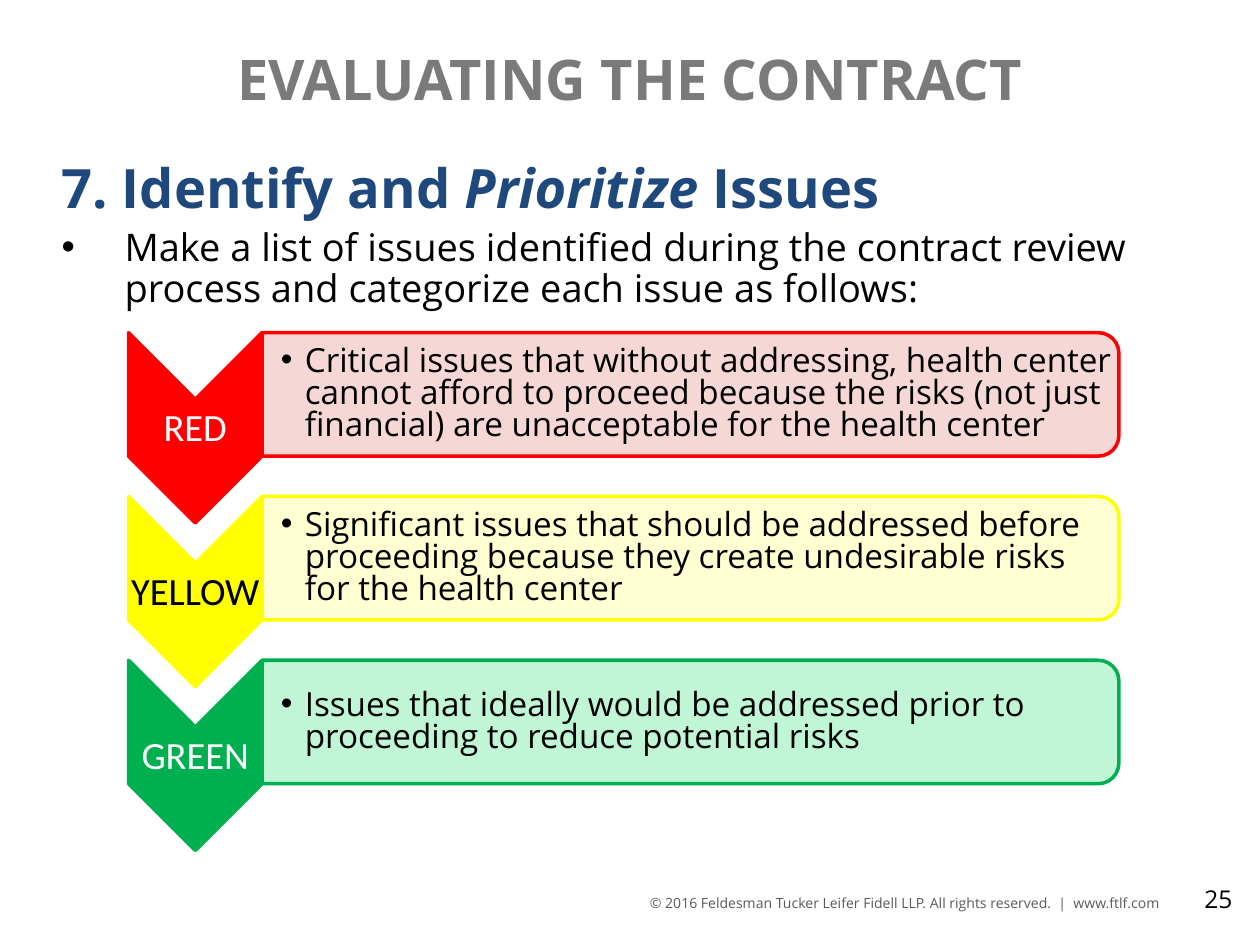
from dataclasses import dataclass

from lxml import etree
from pptx import Presentation
from pptx.dml.color import RGBColor
from pptx.enum.shapes import MSO_SHAPE
from pptx.enum.text import MSO_ANCHOR, PP_ALIGN
from pptx.oxml.ns import qn
from pptx.util import Inches, Pt

CHEVRON = MSO_SHAPE.CHEVRON
PANEL = MSO_SHAPE.ROUND_2_SAME_RECTANGLE
TOP, MIDDLE = MSO_ANCHOR.TOP, MSO_ANCHOR.MIDDLE
LEFT, CENTER, RIGHT = PP_ALIGN.LEFT, PP_ALIGN.CENTER, PP_ALIGN.RIGHT

SANS, LABEL = "Open Sans", "Calibri"
COLORS = {
    "black": "000000", "white": "FFFFFF", "gray": "7A7A7A",
    "foot": "595959", "navy": "1F497D",
    "red": "FF0000", "pink": "F5D3D2",
    "yellow": "FFFF00", "cream": "FFFFCC",
    "green": "00B050", "mint": "BAF4D1",
}
FIRST, PITCH = 2.64, 1.3


@dataclass
class Level:
    name: str
    color: str
    tint: str
    ink: str
    text: str


LEVELS = [
    Level("RED", "red", "pink", "white",
          "Critical issues that without addressing, health center cannot afford to "
          "proceed because the risks (not just financial) are unacceptable for the "
          "health center"),
    Level("YELLOW", "yellow", "cream", "black",
          "Significant issues that should be addressed before proceeding because they "
          "create undesirable risks for the health center"),
    Level("GREEN", "green", "mint", "white",
          "Issues that ideally would be addressed prior to proceeding to reduce "
          "potential risks"),
]


def rgb(name: str) -> RGBColor:
    return RGBColor.from_string(COLORS[name])


def add_box(slide, left: float, top: float, width: float, height: float, *,
            anchor=TOP, pad=(0.1, 0.05, 0.1, 0.05), wrap: bool = True):
    """Add a text box with its insets (left, top, right, bottom) and return its frame."""
    box = slide.shapes.add_textbox(Inches(left), Inches(top), Inches(width), Inches(height))
    frame = box.text_frame
    frame.word_wrap = wrap
    frame.vertical_anchor = anchor
    (frame.margin_left, frame.margin_top,
     frame.margin_right, frame.margin_bottom) = map(Inches, pad)
    return frame


def write(para, *parts: str, size: float, color: str = "black", font: str = SANS,
          bold: bool = False, align=LEFT, line: float = 1.0, before: float = 0,
          hang: float = 0) -> None:
    """Fill a paragraph; every second part is italic, and a hang makes it a bullet."""
    para.alignment = align
    para.line_spacing = line
    para.space_before = Pt(before)
    if hang:
        props = para._p.get_or_add_pPr()
        props.set("marL", str(Inches(hang)))
        props.set("indent", str(-Inches(hang)))
        etree.SubElement(props, qn("a:buFont")).set("typeface", "Arial")
        etree.SubElement(props, qn("a:buChar")).set("char", "•")
    for spot, part in enumerate(parts):
        run = para.add_run()
        run.text = part
        run.font.name = font
        run.font.size = Pt(size)
        run.font.bold = bold
        run.font.italic = spot % 2 == 1
        run.font.color.rgb = rgb(color)


def add_turned(slide, kind, left: float, top: float, width: float, height: float,
               fill: str, edge: str):
    """Add a shape turned by 90 degrees that covers the given area once turned."""
    shape = slide.shapes.add_shape(
        kind, Inches(left + (width - height) / 2), Inches(top + (height - width) / 2),
        Inches(height), Inches(width))
    shape.rotation = 90
    shape.shadow.inherit = False
    shape.fill.solid()
    shape.fill.fore_color.rgb = rgb(fill)
    shape.line.color.rgb = rgb(edge)
    shape.line.width = Pt(2)
    return shape


def add_level(slide, level: Level, top: float) -> None:
    add_turned(slide, CHEVRON, 1.02, top, 1.06, 1.51, level.color, level.color)
    label = add_box(slide, 1.02, top + 0.54, 1.06, 0.45, anchor=MIDDLE,
                    pad=(0.02,) * 4, wrap=False)
    write(label.paragraphs[0], level.name, size=22, color=level.ink, font=LABEL,
          align=CENTER, line=0.9)
    panel = add_turned(slide, PANEL, 2.08, top, 6.8, 0.98, level.tint, level.color)
    tint = panel.fill._xPr.find(qn("a:solidFill"))[0]
    etree.SubElement(tint, qn("a:alpha")).set("val", "90000")
    note = add_box(slide, 2.08, top + 0.05, 6.76, 0.89, anchor=MIDDLE,
                   pad=(0.15, 0.01, 0, 0.01))
    write(note.paragraphs[0], level.text, size=19, line=0.8, hang=0.19)


def main() -> None:
    deck = Presentation()
    deck.slide_width, deck.slide_height = Inches(10), Inches(7.5)
    slide = deck.slides.add_slide(deck.slide_layouts[6])

    foot = add_box(slide, 5.06, 7.05, 4.34, 0.27)
    write(foot.paragraphs[0],
          "© 2016 Feldesman Tucker Leifer Fidell LLP. All rights reserved.  |  www.ftlf.com",
          size=8, color="foot")
    title = add_box(slide, 0.5, 0.3, 9, 1.25)
    write(title.paragraphs[0], "EVALUATING THE CONTRACT", size=32, color="gray",
          bold=True, align=CENTER)
    body = add_box(slide, 0.39, 1.21, 8.8, 1.51, pad=(0.1, 0.07, 0.1, 0.05))
    write(body.paragraphs[0], "7. Identify and ", "Prioritize ", "Issues", size=31,
          color="navy", bold=True, line=0.9)
    write(body.add_paragraph(),
          "Make a list of issues identified during the contract review process and "
          "categorize each issue as follows:",
          size=21.7, line=0.9, before=5, hang=0.5)
    page = add_box(slide, 9.3, 6.97, 0.58, 0.4)
    write(page.paragraphs[0], "25", size=14, align=RIGHT)

    for row, level in enumerate(LEVELS):
        add_level(slide, level, FIRST + row * PITCH)

    deck.save("out.pptx")


if __name__ == "__main__":
    main()
